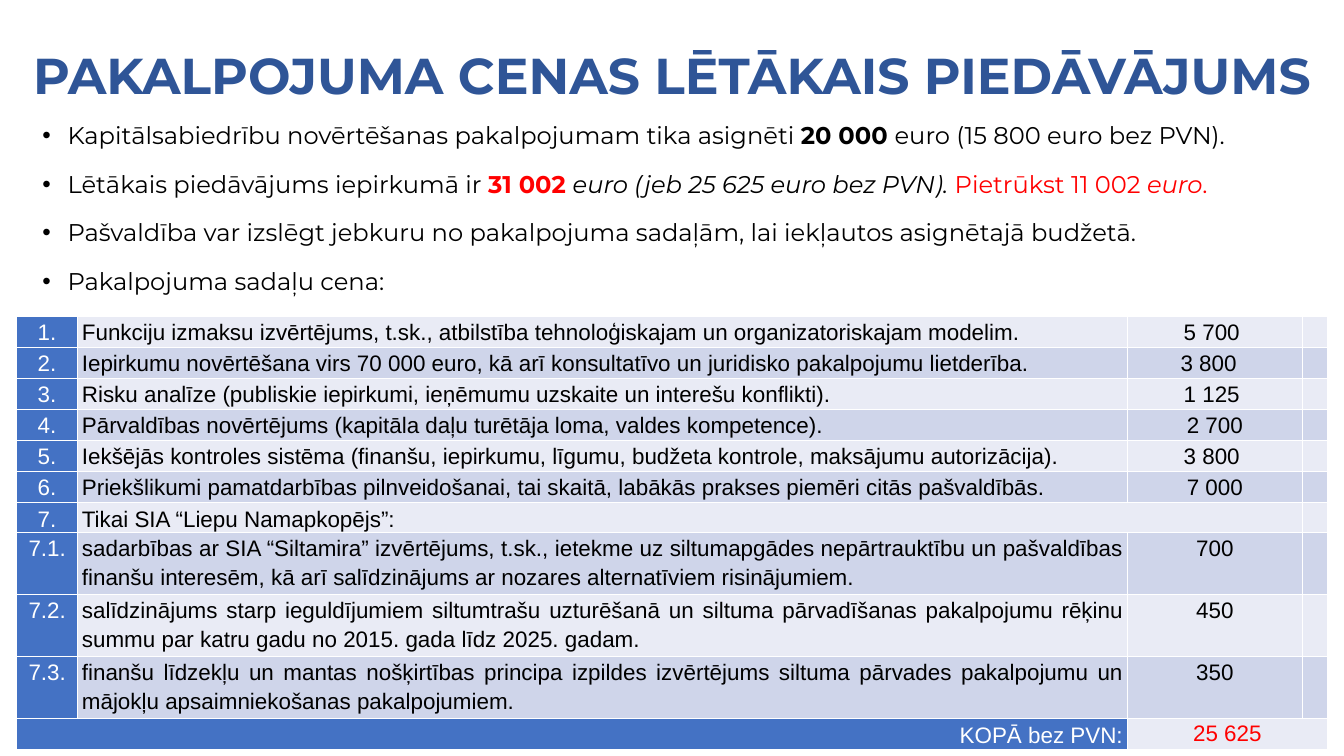
from lxml import etree
from pptx import Presentation
from pptx.dml.color import RGBColor
from pptx.enum.text import MSO_ANCHOR, PP_ALIGN
from pptx.oxml.ns import qn
from pptx.util import Pt

PX = 9525  # 96 px to the inch
LEFT, MID, RIGHT, JUST = PP_ALIGN.LEFT, PP_ALIGN.CENTER, PP_ALIGN.RIGHT, PP_ALIGN.JUSTIFY
TOP, CENTRE, BASE = MSO_ANCHOR.TOP, MSO_ANCHOR.MIDDLE, MSO_ANCHOR.BOTTOM
NAVY = RGBColor(0x2F, 0x55, 0x97)
BLUE = RGBColor(0x44, 0x72, 0xC4)
PALE = RGBColor(0xE9, 0xEB, 0xF5)
MIST = RGBColor(0xCF, 0xD5, 0xEA)
BLACK = RGBColor(0, 0, 0)
WHITE = RGBColor(0xFF, 0xFF, 0xFF)
RED = RGBColor(0xFF, 0, 0)


def write(para, text, font="Arial", size=24, color=BLACK, bold=False,
          italic=False, align=LEFT, line=1.0, before=0, after=0):
    para.alignment = align
    para.line_spacing = line
    para.space_before, para.space_after = Pt(before), Pt(after)
    run = para.add_run()
    run.text = text
    run.font.name, run.font.size = font, Pt(size)
    run.font.bold, run.font.italic = bold, italic
    run.font.color.rgb = color


def add_box(x, y, w, h, anchor, pad):
    frame = slide.shapes.add_textbox(x * PX, y * PX, w * PX, h * PX).text_frame
    frame.word_wrap = True
    frame.vertical_anchor = anchor
    frame.margin_top = frame.margin_bottom = pad * PX
    return frame


deck = Presentation()
deck.slide_width, deck.slide_height = 1920 * PX, 1080 * PX
slide = deck.slides.add_slide(deck.slide_layouts[6])

# Title
title = add_box(0, 0, 1920, 151, BASE, 0)
write(title.paragraphs[0], "PAKALPOJUMA CENAS LĒTĀKAIS PIEDĀVĀJUMS",
      font="Montserrat", size=54, color=NAVY, bold=True, align=MID, line=0.9)

# Bullet points
points = [
    [("Kapitālsabiedrību novērtēšanas pakalpojumam tika asignēti ", {}),
     ("20 000 ", {"bold": True}),
     ("euro (15 800 euro bez PVN).", {})],
    [("Lētākais piedāvājums iepirkumā ir ", {}),
     ("31 002 ", {"bold": True, "color": RED}),
     ("euro (jeb 25 625 euro bez PVN). ", {"italic": True}),
     ("Pietrūkst 11 002 ", {"color": RED}),
     ("euro", {"color": RED, "italic": True}),
     (".", {"color": RED})],
    [("Pašvaldība var izslēgt jebkuru no pakalpojuma sadaļām, "
      "lai iekļautos asignētajā budžetā.", {})],
    [("Pakalpojuma sadaļu cena:", {})],
]
body = add_box(51, 172, 1817, 280, TOP, 5)
for i, runs in enumerate(points):
    para = body.add_paragraph() if i else body.paragraphs[0]
    props = para._p.get_or_add_pPr()
    props.set("marL", str(36 * PX))
    props.set("indent", str(-36 * PX))
    etree.SubElement(props, qn("a:buFont")).set("typeface", "Arial")
    etree.SubElement(props, qn("a:buChar")).set("char", "•")
    for text, style in runs:
        write(para, text, font="Montserrat", size=25.9, align=JUST,
              line=0.9, before=24 if i else 0, **style)

# Price table
items = [
    ("1.", "Funkciju izmaksu izvērtējums, t.sk., atbilstība tehnoloģiskajam un organizatoriskajam modelim.", "5 700 "),
    ("2.", "Iepirkumu novērtēšana virs 70 000 euro, kā arī konsultatīvo un juridisko pakalpojumu lietderība.", "3 800  "),
    ("3.", "Risku analīze (publiskie iepirkumi, ieņēmumu uzskaite un interešu konflikti).", "1 125 "),
    ("4.", "Pārvaldības novērtējums (kapitāla daļu turētāja loma, valdes kompetence).", "2 700"),
    ("5.", "Iekšējās kontroles sistēma (finanšu, iepirkumu, līgumu, budžeta kontrole, maksājumu autorizācija).", "3 800 "),
    ("6.", "Priekšlikumi pamatdarbības pilnveidošanai, tai skaitā, labākās prakses piemēri citās pašvaldībās.", "7 000"),
    ("7.", "Tikai SIA “Liepu Namapkopējs”:", ""),
    ("7.1. ", "sadarbības ar SIA “Siltamira” izvērtējums, t.sk., ietekme uz siltumapgādes nepārtrauktību un "
     "pašvaldības finanšu interesēm, kā arī salīdzinājums ar nozares alternatīviem risinājumiem.", "700"),
    ("7.2. ", "salīdzinājums starp ieguldījumiem siltumtrašu uzturēšanā un siltuma pārvadīšanas pakalpojumu rēķinu "
     "summu par katru gadu no 2015. gada līdz 2025. gadam.", "450"),
    ("7.3. ", "finanšu līdzekļu un mantas nošķirtības principa izpildes izvērtējums siltuma pārvades pakalpojumu un "
     "mājokļu apsaimniekošanas pakalpojumiem.", "350"),
    ("KOPĀ bez PVN:", "", "25 625"),
]
last = len(items) - 1
grid = slide.shapes.add_table(len(items), 4, 24 * PX, 452 * PX, 1872 * PX, 574 * PX).table
for col, width in zip(grid.columns, (86, 1501, 249, 36)):
    col.width = width * PX
grid.cell(6, 1).merge(grid.cell(6, 2))
grid.cell(last, 0).merge(grid.cell(last, 1))
grid.cell(last, 2).merge(grid.cell(last, 3))

for r, item in enumerate(items):
    sub = 7 <= r < last
    grid.rows[r].height = (82 if sub else 41) * PX
    aligns = (RIGHT if r >= 7 else MID, LEFT if r == 6 else JUST, MID, MID)
    for c, text in enumerate(item + ("",)):
        cell = grid.cell(r, c)
        cell.fill.solid()
        cell.fill.fore_color.rgb = BLUE if c == 0 else MIST if r % 2 else PALE
        cell.margin_left = cell.margin_right = 7 * PX
        cell.margin_top = cell.margin_bottom = 0
        cell.vertical_anchor = CENTRE if r in (6, last) else TOP
        para = cell.text_frame.paragraphs[0]
        if text:
            color = WHITE if c == 0 else RED if r == last else BLACK
            write(para, text, color=color, align=aligns[c],
                  line=1.0 if r == last and c else 1.15)
        else:
            para.font.size = Pt(12)

deck.save("out.pptx")
